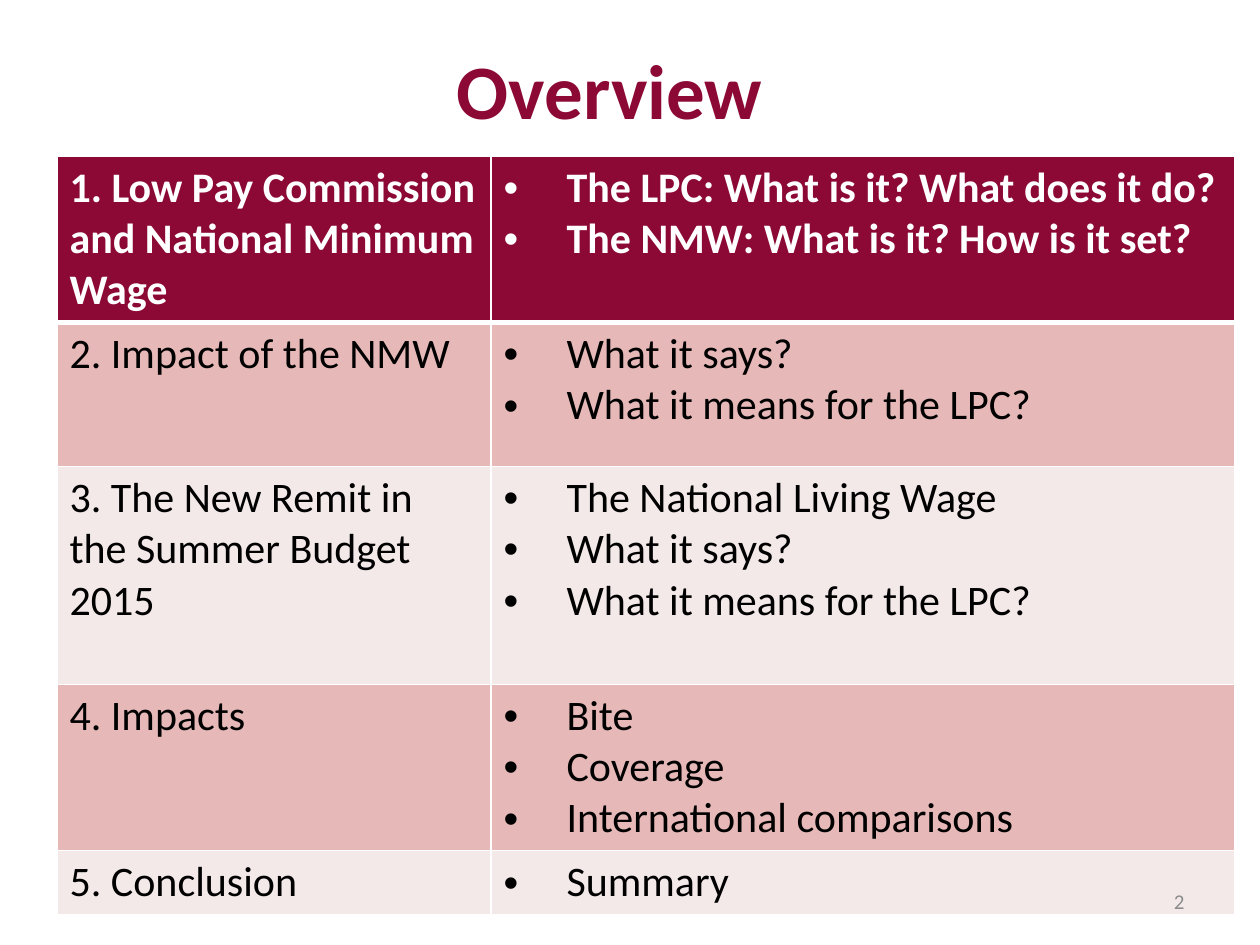
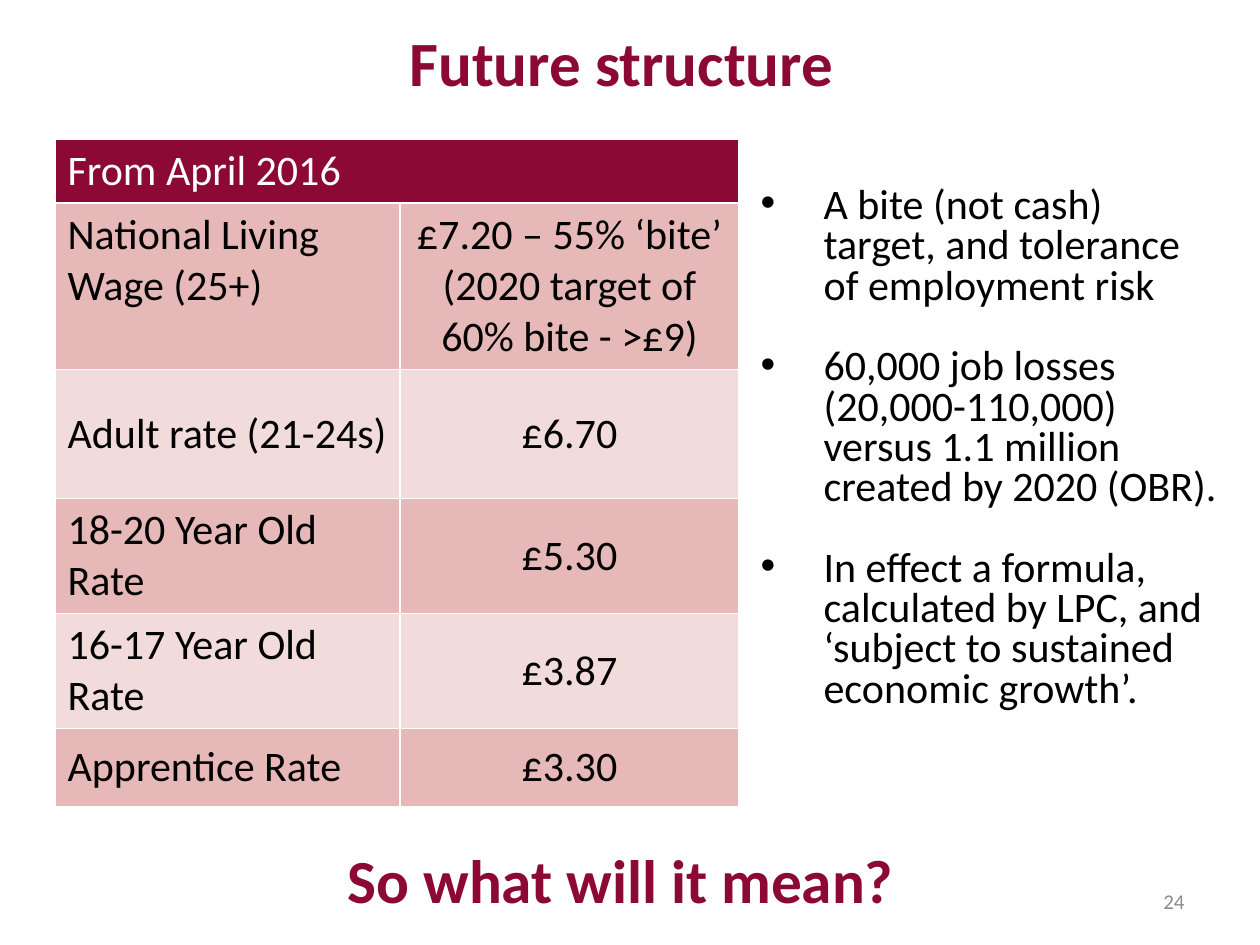
from lxml.etree import SubElement
from pptx import Presentation
from pptx.dml.color import RGBColor
from pptx.enum.text import MSO_ANCHOR, MSO_AUTO_SIZE, PP_ALIGN
from pptx.oxml.ns import qn
from pptx.util import Emu, Pt

PX = 914400 / 126
FONT = "Calibri"
WINE, ROSE, MIST, BLUSH = "8C0935", "E6B9B8", "F4E9E9", "F2DCDB"
WHITE, BLACK, GREY = "FFFFFF", "000000", "8C8C8C"
TITLE_ONLY, TITLE_AND_BODY = 5, 1
LEFT, CENTER, RIGHT = PP_ALIGN.LEFT, PP_ALIGN.CENTER, PP_ALIGN.RIGHT
TOP, MIDDLE = MSO_ANCHOR.TOP, MSO_ANCHOR.MIDDLE

OVERVIEW = [
    ("1. Low Pay Commission and National Minimum Wage",
     ["The LPC: What is it? What does it do?", "The NMW: What is it? How is it set?"]),
    ("2. Impact of the NMW", ["What it says?", "What it means for the LPC?"]),
    ("3. The New Remit in the Summer Budget 2015",
     ["The National Living Wage", "What it says?", "What it means for the LPC?"]),
    ("4. Impacts", ["Bite", "Coverage", "International comparisons"]),
    ("5. Conclusion", ["Summary"]),
]
RATES = [
    ("From April 2016", ""),
    ("National Living Wage (25+)", "£7.20 – 55% ‘bite’ (2020 target of 60% bite - >£9)"),
    ("Adult rate (21-24s)", "£6.70"),
    ("18-20 Year Old Rate", "£5.30"),
    ("16-17 Year Old Rate", "£3.87"),
    ("Apprentice Rate", "£3.30"),
]
REMARKS = [
    "A bite (not cash) target, and tolerance of employment risk",
    "60,000 job losses (20,000-110,000) versus 1.1 million created by 2020 (OBR).",
    "In effect a formula, calculated by LPC, and ‘subject to sustained economic growth’.",
]


def px(n):
    return Emu(round(n * PX))


def rgb(color):
    return RGBColor.from_string(color)


def add_bullet(p):
    pPr = p._p.get_or_add_pPr()
    pPr.set("marL", str(px(63)))
    pPr.set("indent", str(px(-63)))
    SubElement(pPr, qn("a:buFont"), typeface="Arial")
    SubElement(pPr, qn("a:buChar"), char="•")


def write(tf, text, size=24, color=BLACK, bold=False, align=LEFT,
          bullets=False, leading=None, gap=0):
    lines = [text] if isinstance(text, str) else text
    for i, line in enumerate(lines):
        p = tf.paragraphs[0] if i == 0 else tf.add_paragraph()
        p.alignment = align
        p.space_before = Pt(gap if i else 0)
        if leading:
            p.line_spacing = leading
        if bullets:
            add_bullet(p)
        r = p.add_run()
        r.text = line
        r.font.name, r.font.size, r.font.bold = FONT, Pt(size), bold
        r.font.color.rgb = rgb(color)


def fill_box(sp, box, text, anchor=MIDDLE, **fmt):
    sp.left, sp.top, sp.width, sp.height = map(px, box)
    tf = sp.text_frame
    tf.word_wrap = True
    tf.auto_size = MSO_AUTO_SIZE.NONE
    tf.vertical_anchor = anchor
    write(tf, text, **fmt)


def add_text(s, box, text, **fmt):
    fill_box(s.shapes.add_textbox(*map(px, box)), box, text, **fmt)


def add_slide(prs, layout, title, box, size, number):
    s = prs.slides.add_slide(prs.slide_layouts[layout])
    fill_box(s.shapes.title, box, title, size=size, color=WINE, bold=True, align=CENTER)
    return s, lambda: add_text(s, (903, 876, 294, 50), number,
                               size=12, color=GREY, align=RIGHT)


def set_borders(cell, top=1, bottom=1):
    tcPr = cell._tc.get_or_add_tcPr()
    for side, width in (("L", 1), ("R", 1), ("T", top), ("B", bottom)):
        ln = SubElement(tcPr, qn(f"a:ln{side}"), w=str(Pt(width)))
        SubElement(SubElement(ln, qn("a:solidFill")), qn("a:srgbClr"), val=WHITE)


def add_table(s, left, top, cols, heights, rows, bands, head_rule=1,
              head_bold=False, value_align=LEFT, middle_from=99):
    frame = s.shapes.add_table(len(rows), len(cols), px(left), px(top),
                               px(sum(cols)), px(sum(heights)))
    table = frame.table
    for col, width in zip(table.columns, cols):
        col.width = px(width)
    for i, (row, height) in enumerate(zip(rows, heights)):
        table.rows[i].height = px(height)
        for j, text in enumerate(row):
            cell = table.cell(i, j)
            set_borders(cell, head_rule if i == 1 else 1, head_rule if i == 0 else 1)
            cell.fill.solid()
            cell.fill.fore_color.rgb = rgb(bands[(i - 1) % 2] if i else WINE)
            cell.vertical_anchor = MIDDLE if i >= middle_from else TOP
            if text:
                write(cell.text_frame, text, color=BLACK if i else WHITE,
                      bold=head_bold and i == 0, align=value_align if j else LEFT,
                      bullets=isinstance(text, list))
    return table


def overview_slide(prs):
    s, add_number = add_slide(prs, TITLE_ONLY, "Overview", (74, 26, 1071, 125), 44, "2")
    add_table(s, 57, 156, (434, 744), (166, 144, 218, 166, 62), OVERVIEW,
              (ROSE, MIST), head_rule=3, head_bold=True)
    add_number()


def structure_slide(prs):
    s, add_number = add_slide(prs, TITLE_AND_BODY, "Future structure",
                              (26, 16, 1191, 90), 36, "24")
    table = add_table(s, 55, 139, (345, 339), (64, 166, 129, 115, 115, 78), RATES,
                      (ROSE, BLUSH), value_align=CENTER, middle_from=2)
    table.cell(0, 0).merge(table.cell(0, 1))
    fill_box(s.placeholders[1], (748, 181, 486, 572), REMARKS, anchor=TOP,
             bullets=True, leading=0.8, gap=23)
    add_text(s, (54, 800, 1134, 158), "So what will it mean?",
             size=35, color=WINE, bold=True, align=CENTER)
    add_number()


def main():
    prs = Presentation()
    prs.slide_width, prs.slide_height = px(1260), px(945)
    overview_slide(prs)
    structure_slide(prs)
    prs.save("out.pptx")


if __name__ == "__main__":
    main()
